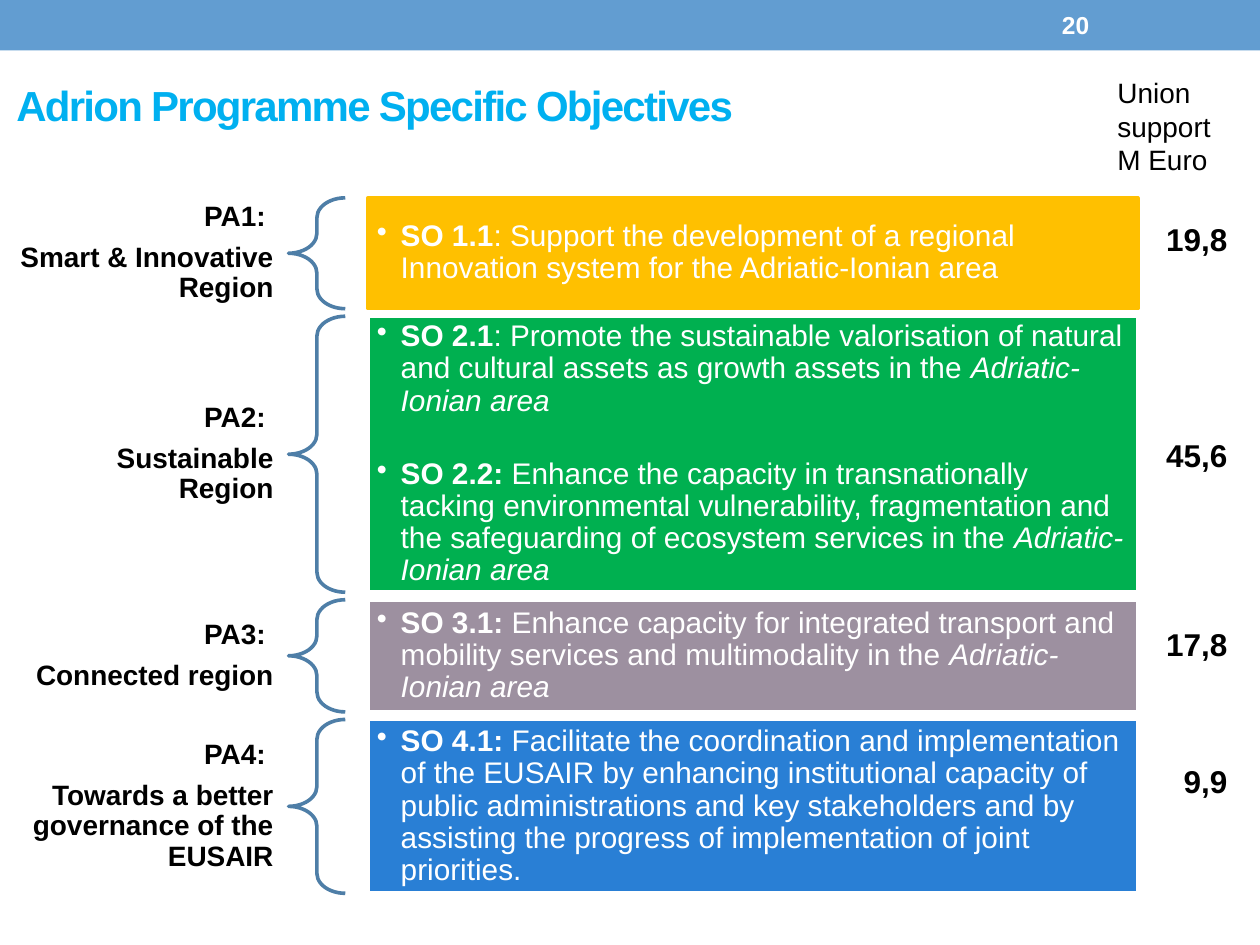
import pptx
import pptx.util
import pptx.dml.color
import pptx.enum.shapes
import pptx.enum.text
import lxml.etree
from dataclasses import dataclass
from pptx.oxml.ns import qn

Inches, Pt = pptx.util.Inches, pptx.util.Pt
SHAPE = pptx.enum.shapes.MSO_SHAPE
ALIGN = pptx.enum.text.PP_ALIGN
MIDDLE = pptx.enum.text.MSO_ANCHOR.MIDDLE
TOP = pptx.enum.text.MSO_ANCHOR.TOP


@dataclass(frozen=True)
class Theme:
    font: str = "Arial"
    banner: str = "629DD1"
    heading: str = "00B0F0"
    brace: str = "4E7EA7"
    dark: str = "000000"
    light: str = "FFFFFF"
    innovation: str = "FFC000"
    sustainable: str = "00B050"
    connected: str = "9D90A0"
    governance: str = "297FD5"
    title_size: int = 24
    amount_size: int = 18
    objective_size: int = 17
    label_size: int = 16
    number_size: int = 14
    line_width: float = 2.08


THEME = Theme()


def rgb(value):
    return pptx.dml.color.RGBColor.from_string(value)


def write_text(frame, paragraphs, *, size, color=THEME.dark, bold=False,
               align=ALIGN.LEFT, anchor=TOP, insets=(0.1, 0.05),
               line_spacing=None, space_after=0, bullet_indent=None, tracking=None):
    """Fill a frame; a paragraph is a string or a list of (text, style) with style "b", "i" or ""."""
    frame.word_wrap = True
    frame.vertical_anchor = anchor
    frame.margin_left = frame.margin_right = Inches(insets[0])
    frame.margin_top = frame.margin_bottom = Inches(insets[1])
    for index, content in enumerate(paragraphs):
        paragraph = frame.add_paragraph() if index else frame.paragraphs[0]
        paragraph.alignment = align
        paragraph.line_spacing = line_spacing
        is_last = index == len(paragraphs) - 1
        paragraph.space_after = Pt(0 if is_last else space_after)
        if bullet_indent:
            properties = paragraph._p.get_or_add_pPr()
            properties.set("marL", str(Inches(bullet_indent)))
            properties.set("indent", str(-Inches(bullet_indent)))
            lxml.etree.SubElement(properties, qn("a:buChar")).set("char", "•")
        runs = [(content, "b" if bold else "")] if isinstance(content, str) else content
        for text, style in runs:
            run = paragraph.add_run()
            run.text = text
            run.font.name = THEME.font
            run.font.size = Pt(size)
            run.font.color.rgb = rgb(color)
            run.font.bold = "b" in style
            run.font.italic = "i" in style
            if tracking:
                run._r.get_or_add_rPr().set("spc", str(tracking))


class SlideBuilder:
    def __init__(self, slide, theme):
        self.slide = slide
        self.theme = theme

    def title(self, text, box):
        heading = self.slide.shapes.title
        heading.left, heading.top, heading.width, heading.height = map(Inches, box)
        write_text(heading.text_frame, [text], size=self.theme.title_size, bold=True,
                   color=self.theme.heading, anchor=MIDDLE, tracking=-100)

    def text(self, paragraphs, box, **style):
        frame = self.slide.shapes.add_textbox(*map(Inches, box)).text_frame
        write_text(frame, paragraphs, **style)

    def panel(self, box, fill, line=None):
        panel = self.slide.shapes.add_shape(SHAPE.RECTANGLE, *map(Inches, box))
        panel.shadow.inherit = False
        panel.fill.solid()
        panel.fill.fore_color.rgb = rgb(fill)
        if line:
            panel.line.color.rgb = rgb(line)
            panel.line.width = Pt(self.theme.line_width)
        else:
            panel.line.fill.background()
        return panel

    def brace(self, box):
        brace = self.slide.shapes.add_shape(SHAPE.LEFT_BRACE, *map(Inches, box))
        brace.adjustments[0] = 0.35
        brace.shadow.inherit = False
        brace.fill.background()
        brace.line.color.rgb = rgb(self.theme.brace)
        brace.line.width = Pt(self.theme.line_width)

    def axis_row(self, axis, top):
        """Draw one priority axis: label, brace, objectives and amount."""
        height = axis["height"]
        self.text(axis["label"], (0.04, top, 2.25, height), size=self.theme.label_size,
                  bold=True, align=ALIGN.RIGHT, anchor=MIDDLE, insets=(0.12, 0.04),
                  line_spacing=0.9, space_after=6)
        self.brace((2.29, top, 0.45, height))
        panel = self.panel((2.92, top, 6.11, height), axis["fill"], axis["line"])
        write_text(panel.text_frame, axis["objectives"], size=self.theme.objective_size,
                   color=self.theme.light, anchor=MIDDLE, insets=(0.07, 0.07),
                   line_spacing=0.9, space_after=23.5, bullet_indent=0.19)
        self.text([axis["amount"]], (9.04, axis["amount_top"], 0.8, 0.4),
                  size=self.theme.amount_size, bold=True, align=ALIGN.RIGHT)


AREA = ("Adriatic-Ionian area", "i")
AXES = [
    dict(label=["PA1: ", "Smart & Innovative Region"], height=0.88,
         fill=THEME.innovation, line=THEME.innovation, amount="19,8", amount_top=1.7,
         objectives=[[("SO 1.1", "b"),
                      (": Support the development of a regional Innovation system "
                       "for the Adriatic-Ionian area", "")]]),
    dict(label=["PA2: ", "Sustainable Region"], height=2.19,
         fill=THEME.sustainable, line=THEME.light, amount="45,6", amount_top=3.41,
         objectives=[[("SO 2.1", "b"),
                      (": Promote the sustainable valorisation of natural and cultural "
                       "assets as growth assets in the ", ""), AREA],
                     [("SO 2.2: ", "b"),
                      ("Enhance the capacity in transnationally tacking environmental "
                       "vulnerability, fragmentation and the safeguarding of ecosystem "
                       "services in the ", ""), AREA]]),
    dict(label=["PA3: ", "Connected region"], height=0.89,
         fill=THEME.connected, line=THEME.light, amount="17,8", amount_top=4.91,
         objectives=[[("SO 3.1: ", "b"),
                      ("Enhance capacity for integrated transport and mobility services "
                       "and multimodality in the ", ""), AREA]]),
    dict(label=["PA4: ", "Towards a better governance of the EUSAIR"], height=1.38,
         fill=THEME.governance, line=THEME.light, amount="9,9", amount_top=6,
         objectives=[[("SO 4.1: ", "b"),
                      ("Facilitate the coordination and implementation of the EUSAIR by "
                       "enhancing institutional capacity of public administrations and "
                       "key stakeholders and by assisting the progress of implementation "
                       "of joint priorities.", "")]]),
]
FIRST_ROW_TOP = 1.57
ROW_GAP = 0.06


def main():
    presentation = pptx.Presentation()
    presentation.slide_width, presentation.slide_height = Inches(10), Inches(7.5)
    title_only = presentation.slide_layouts[5]
    builder = SlideBuilder(presentation.slides.add_slide(title_only), THEME)

    builder.panel((0, 0, 10, 0.4), THEME.banner)
    builder.title("Adrion Programme Specific Objectives", (0.03, 0.29, 9, 1.08))
    builder.text(["20"], (8.33, 0.02, 1.17, 0.36), size=THEME.number_size,
                 color=THEME.light, bold=True, anchor=MIDDLE)
    top = FIRST_ROW_TOP
    for axis in AXES:
        builder.axis_row(axis, top)
        top += axis["height"] + ROW_GAP
    builder.text(["Union support", "M Euro"], (8.77, 0.55, 1.08, 0.91),
                 size=THEME.label_size)
    presentation.save("out.pptx")


if __name__ == "__main__":
    main()
